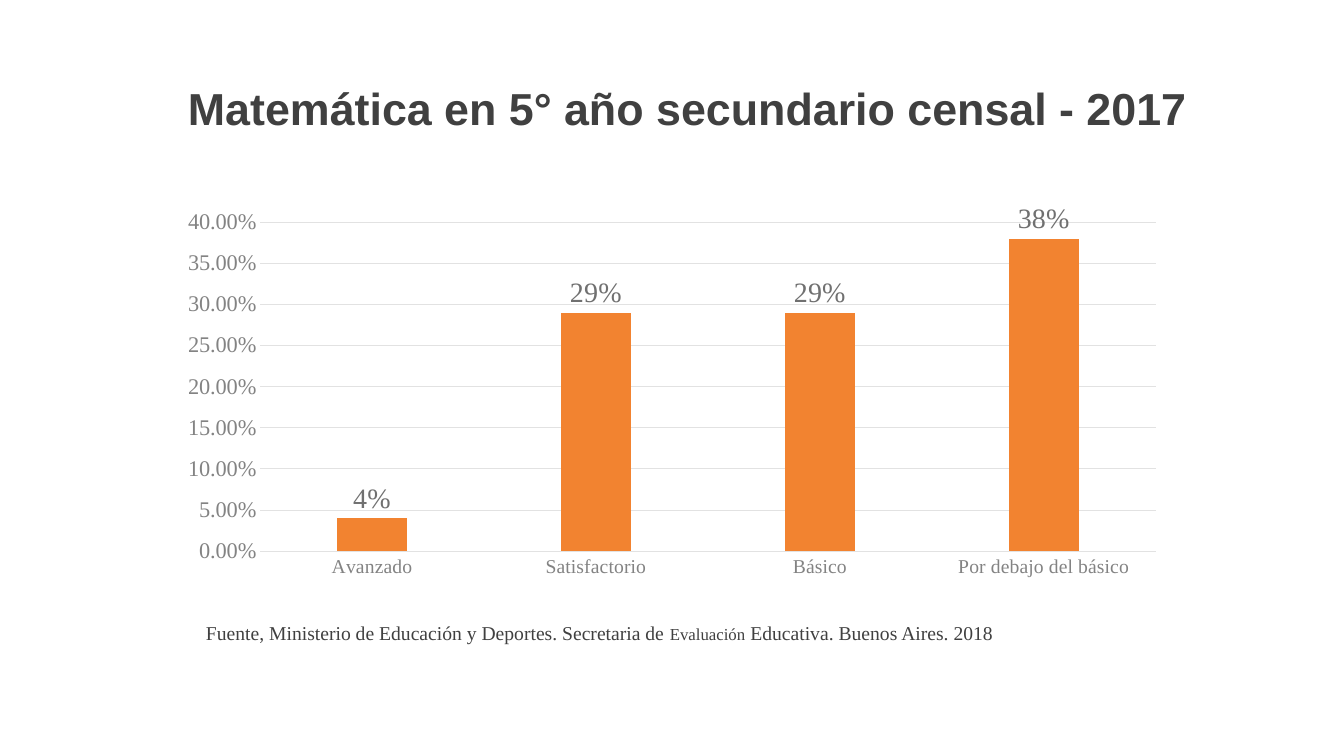
"""Builds a slide with a column chart of 2017 mathematics results."""
from dataclasses import dataclass

from pptx import Presentation
from pptx.chart.data import CategoryChartData
from pptx.dml.color import RGBColor
from pptx.enum.chart import XL_CHART_TYPE, XL_LABEL_POSITION, XL_TICK_MARK
from pptx.enum.text import MSO_ANCHOR, PP_ALIGN
from pptx.util import Emu, Pt

COLUMNS = XL_CHART_TYPE.COLUMN_CLUSTERED
OUTSIDE_END = XL_LABEL_POSITION.OUTSIDE_END
NO_TICK = XL_TICK_MARK.NONE
BOTTOM = MSO_ANCHOR.BOTTOM
TOP = MSO_ANCHOR.TOP
CENTER = PP_ALIGN.CENTER
LEFT = PP_ALIGN.LEFT


@dataclass(frozen=True)
class Theme:
    """Colours, fonts and type sizes of the slide."""
    ink: str = "404040"
    axis: str = "838383"
    label: str = "707070"
    grid: str = "E2E2E2"
    bar: str = "F28330"
    sans: str = "Arial"
    serif: str = "Times New Roman"
    title_size: int = 32
    label_size: int = 20
    value_size: int = 16
    body_size: int = 14
    small_size: int = 12
    grid_width: float = 0.75


THEME = Theme()
TITLE = "Matemática en 5° año secundario censal - 2017"
RESULTS = {
    "Avanzado": 0.04,
    "Satisfactorio": 0.29,
    "Básico": 0.29,
    "Por debajo del básico": 0.38,
}
CITATION = [
    ("Fuente, Ministerio de Educación y Deportes. Secretaria de ", THEME.body_size),
    ("Evaluación", THEME.small_size),
    (" Educativa. Buenos Aires. 2018", THEME.body_size),
]

SLIDE_SIZE = (1344, 756)
TITLE_BOX = (97, 40, 1182, 100)
CHART_BOX = (168, 202, 1008, 383)
CITATION_BOX = (196, 616, 842, 34)
EMU_PER_PX = 914400 / 100.8


def px(length):
    return Emu(round(length * EMU_PER_PX))


def style_font(font, name, size, color, bold=False):
    font.name = name
    font.size = Pt(size)
    font.bold = bold
    font.color.rgb = RGBColor.from_string(color)


def style_line(line):
    line.width = Pt(THEME.grid_width)
    line.color.rgb = RGBColor.from_string(THEME.grid)


def fill_text(box, runs, font_name, anchor, align, bold=False):
    frame = box.text_frame
    frame.word_wrap = True
    frame.vertical_anchor = anchor
    paragraph = frame.paragraphs[0]
    paragraph.alignment = align
    for text, size in runs:
        run = paragraph.add_run()
        run.text = text
        style_font(run.font, font_name, size, THEME.ink, bold)
    return paragraph


def add_title(slide):
    title = slide.shapes.title
    title.left, title.top, title.width, title.height = map(px, TITLE_BOX)
    heading = fill_text(title, [(TITLE, THEME.title_size)], THEME.sans, BOTTOM, CENTER, True)
    heading.line_spacing = 0.9


def add_results_chart(slide):
    data = CategoryChartData(number_format="0%")
    data.categories = list(RESULTS)
    data.add_series("Series 1", list(RESULTS.values()))
    chart = slide.shapes.add_chart(COLUMNS, *map(px, CHART_BOX), data).chart
    chart.has_title = False
    chart.has_legend = False
    style_font(chart.font, THEME.sans, THEME.body_size, THEME.ink)

    levels = chart.category_axis
    levels.major_tick_mark = levels.minor_tick_mark = NO_TICK
    style_font(levels.tick_labels.font, THEME.serif, THEME.body_size, THEME.axis)
    style_line(levels.format.line)

    shares = chart.value_axis
    shares.major_tick_mark = shares.minor_tick_mark = NO_TICK
    shares.minimum_scale, shares.maximum_scale, shares.major_unit = 0, 0.4, 0.05
    style_font(shares.tick_labels.font, THEME.serif, THEME.value_size, THEME.axis)
    shares.tick_labels.number_format = "0.00%"
    shares.tick_labels.number_format_is_linked = False
    shares.format.line.fill.background()
    shares.has_major_gridlines = True
    style_line(shares.major_gridlines.format.line)

    plot = chart.plots[0]
    plot.gap_width = 219
    plot.overlap = -27
    plot.vary_by_categories = False
    bars = plot.series[0]
    bars.format.fill.solid()
    bars.format.fill.fore_color.rgb = RGBColor.from_string(THEME.bar)
    labels = bars.data_labels
    labels.show_value = True
    labels.position = OUTSIDE_END
    labels.number_format = "0%"
    labels.number_format_is_linked = False
    style_font(labels.font, THEME.serif, THEME.label_size, THEME.label)


def add_citation(slide):
    citation = slide.shapes.add_textbox(*map(px, CITATION_BOX))
    fill_text(citation, CITATION, THEME.serif, TOP, LEFT)


def main():
    deck = Presentation()
    deck.slide_width, deck.slide_height = map(px, SLIDE_SIZE)
    slide = deck.slides.add_slide(deck.slide_layouts[5])
    add_title(slide)
    add_results_chart(slide)
    add_citation(slide)
    deck.save("out.pptx")


if __name__ == "__main__":
    main()
